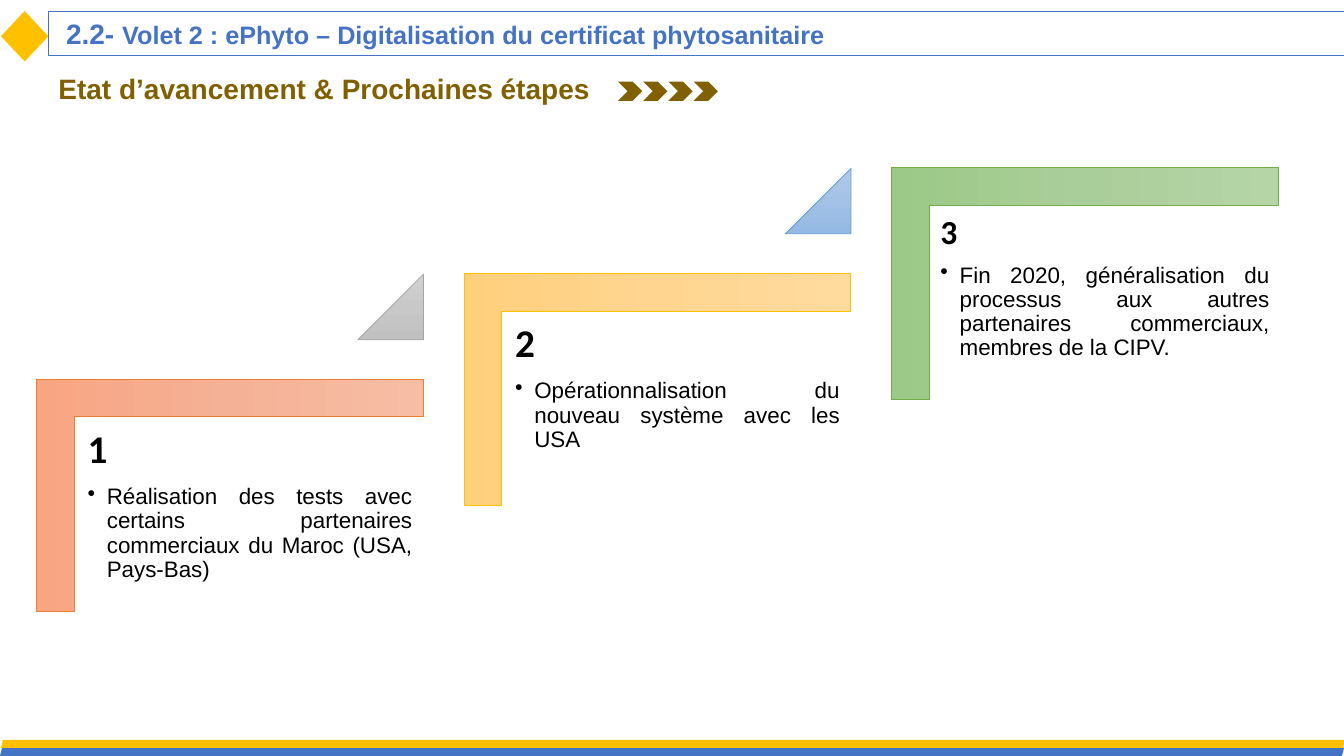
import pptx
import pptx.util
import pptx.dml.color
import pptx.enum.shapes
import pptx.enum.text
import pptx.oxml
import pptx.oxml.ns

Inches, Pt = pptx.util.Inches, pptx.util.Pt
Kind = pptx.enum.shapes.MSO_SHAPE
Align = pptx.enum.text.PP_ALIGN
Anchor = pptx.enum.text.MSO_ANCHOR

BLUE, GOLD, BROWN, BLACK = "4472C4", "FFC000", "806000", "000000"


def color(code):
    return pptx.dml.color.RGBColor.from_string(code)


def node(tag, body="", **attrs):
    pairs = "".join(f' {key}="{val}"' for key, val in attrs.items())
    return pptx.oxml.parse_xml(
        f"<a:{tag} {pptx.oxml.ns.nsdecls('a')}{pairs}>{body}</a:{tag}>")


class Deck:
    font = "Arial"

    def __init__(self):
        self.prs = pptx.Presentation()
        self.prs.slide_width = Inches(13.33)
        self.prs.slide_height = Inches(7.5)
        self.slide = self.prs.slides.add_slide(self.prs.slide_layouts[6])

    def shape(self, kind, box, fill=None, line=None, width=0.5, adj=(), turn=0):
        item = self.slide.shapes.add_shape(kind, *map(Inches, box))
        item.shadow.inherit = False
        item.rotation = turn
        for i, val in enumerate(adj):
            item.adjustments[i] = val
        if fill:
            item.fill.solid()
            item.fill.fore_color.rgb = color(fill)
        else:
            item.fill.background()
        if line:
            item.line.color.rgb = color(line)
            item.line.width = Pt(width)
        else:
            item.line.fill.background()
        return item

    def fade(self, item, tones):
        """Fill a shape with an even gradient running downwards."""
        stops = "".join(
            f'<a:gs pos="{i * 50000}"><a:srgbClr val="{tone}"/></a:gs>'
            for i, tone in enumerate(tones))
        grad = node("gradFill", f'<a:gsLst>{stops}</a:gsLst>'
                    '<a:lin ang="5400000" scaled="0"/>', rotWithShape=1)
        props = item.fill._xPr
        props.replace(props.find(pptx.oxml.ns.qn("a:noFill")), grad)

    def text(self, box, inset=None, wrap=True):
        frame = self.slide.shapes.add_textbox(*map(Inches, box)).text_frame
        frame.word_wrap = wrap
        if inset:
            frame.margin_left = frame.margin_right = Inches(inset)
            frame.margin_top = frame.margin_bottom = Inches(inset)
        return frame

    def run(self, para, words, size, tint, bold=True, font=None):
        run = para.add_run()
        run.text = words
        run.font.name = font or self.font
        run.font.size = Pt(size)
        run.font.bold = bold
        run.font.color.rgb = color(tint)

    def space(self, para, after):
        para.alignment = Align.JUSTIFY
        para.line_spacing = 0.9
        props = para._p.get_or_add_pPr()
        props.append(node("spcAft", f'<a:spcPct val="{after * 1000}"/>'))
        return props

    def step(self, left, top, num, size, inset, words, tones, line):
        """One stair: corner bracket, number and bulleted text."""
        bend = self.shape(Kind.CORNER, (left, top, 2.3, 3.83), line=line,
                          adj=(0.161, 0.161), turn=90)
        self.fade(bend, tones)
        frame = self.text((left - 0.38, top + 1.14, 3.46, 3.03), inset)
        head = frame.paragraphs[0]
        self.space(head, 35)
        self.run(head, num, size, BLACK, font="Calibri")
        item = frame.add_paragraph()
        item.level = 1
        props = self.space(item, 15)
        props.set("marL", str(Inches(0.19)))
        props.set("indent", str(-Inches(0.19)))
        props.append(node("buChar", char="•"))
        self.run(item, words, 16, BLACK, bold=False)

    def wedge(self, left, top, tones, line):
        tip = self.shape(Kind.ISOSCELES_TRIANGLE, (left, top, 0.65, 0.65),
                         line=line, adj=(1,))
        self.fade(tip, tones)


STEPS = [
    ("1", 28, 0.12, "Réalisation des tests avec certains partenaires "
     "commerciaux du Maroc (USA, Pays-Bas)",
     ("F7BDA5", "F5B196", "F8A582"), "ED7D31"),
    ("2", 28, 0.12, "Opérationnalisation du nouveau système avec les USA",
     ("FFDB9E", "FFD590", "FFD07C"), "FFC000"),
    ("3", 24, 0.1, "Fin 2020, généralisation du processus aux autres "
     "partenaires commerciaux, membres de la CIPV.",
     ("B5D5A7", "AACE9A", "9CC987"), "70AD47"),
]
WEDGES = [
    (("D2D2D2", "C8C8C8", "C0C0C0"), "A5A5A5"),
    (("B1CBE9", "A3C1E5", "93B9E4"), "5B9BD5"),
]
RUN, RISE = 4.24, 1.05


def main():
    deck = Deck()

    # Title bar
    bar = deck.shape(Kind.RECTANGLE, (0.48, 0.11, 12.86, 0.44),
                     line=BLUE, width=0.75)
    bar.text_frame.word_wrap = True
    bar.text_frame.vertical_anchor = Anchor.MIDDLE
    title = bar.text_frame.paragraphs[0]
    title.alignment = Align.LEFT
    deck.run(title, " 2.2- ", 20, BLUE)
    deck.run(title, "Volet 2 : ePhyto – Digitalisation du certificat "
             "phytosanitaire", 18, BLUE)
    deck.shape(Kind.DIAMOND, (0.01, 0.11, 0.47, 0.5), GOLD)

    # Footer bands
    deck.shape(Kind.PARALLELOGRAM, (0, 7.42, 13.33, 0.08), BLUE)
    deck.shape(Kind.PARALLELOGRAM, (0.01, 7.34, 13.33, 0.08), GOLD)

    # Rising steps, with a wedge between neighbours
    for i, step in enumerate(STEPS):
        deck.step(1.13 + i * RUN, 3 - i * RISE, *step)
        if i < len(WEDGES):
            deck.wedge(3.55 + i * RUN, 2.72 - i * RISE, *WEDGES[i])

    # Subtitle and chevrons
    frame = deck.text((0.48, 0.66, 5.52, 0.44), wrap=False)
    deck.run(frame.paragraphs[0], "Etat d’avancement & Prochaines étapes",
             20, BROWN)
    for i in range(4):
        deck.shape(Kind.CHEVRON, (6.13 + i * 0.25, 0.81, 0.24, 0.19), BROWN)

    deck.prs.save("out.pptx")


if __name__ == "__main__":
    main()
